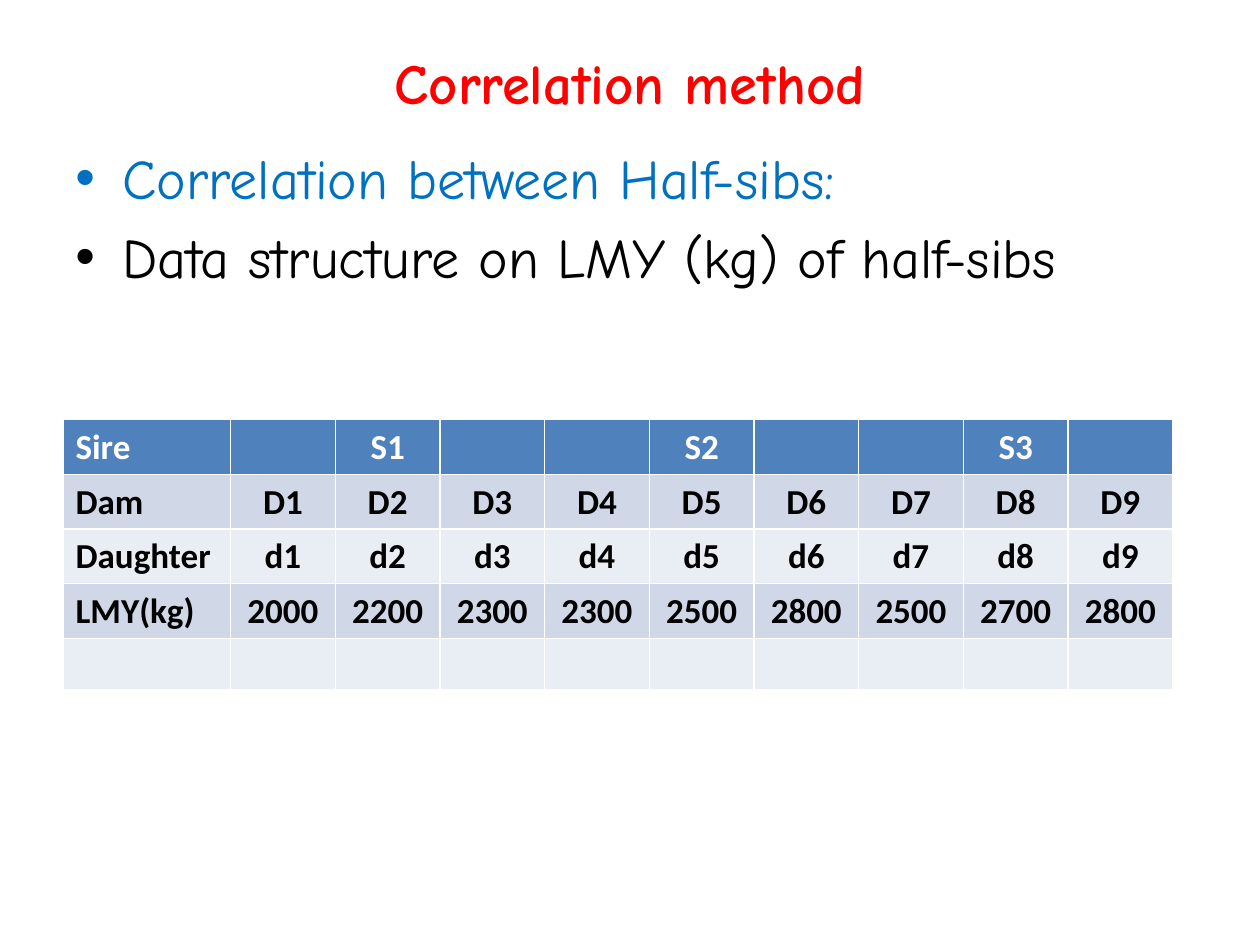
"""Build the slide on the correlation method for half-sibs."""
import lxml.etree
import pptx
import pptx.dml.color
import pptx.enum.text
import pptx.oxml.ns
import pptx.util

Cm = pptx.util.Cm
Pt = pptx.util.Pt
ALIGN = pptx.enum.text.PP_ALIGN
ANCHOR = pptx.enum.text.MSO_ANCHOR

THEME = {
    "heading_font": "Comic Neue",
    "table_font": "Calibri",
    "title_size": 32.4,
    "point_size": 32,
    "table_size": 20,
    "title": "FF0000",
    "accent": "0070C0",
    "ink": "000000",
    "header_ink": "FFFFFF",
    "header_fill": "4F81BD",
    "bands": ("D0D8E8", "E9EDF4"),
}

TITLE = "Correlation method"
POINTS = [
    ("Correlation between Half-sibs:", "accent"),
    ("Data structure on LMY (kg) of half-sibs", "ink"),
]
RECORDS = [
    ["Sire", "", "S1", "", "", "S2", "", "", "S3", ""],
    ["Dam"] + [f"D{number}" for number in range(1, 10)],
    ["Daughter"] + [f"d{number}" for number in range(1, 10)],
    ["LMY(kg)", "2000", "2200", "2300", "2300", "2500", "2800", "2500", "2700", "2800"],
    [""] * 10,
]

LEFT, WIDTH = Cm(1.27), Cm(22.86)
LABEL_WIDTH, VALUE_WIDTH, ROW_HEIGHT = Cm(3.38), Cm(2.11), Cm(1.04)


def color(code):
    return pptx.dml.color.RGBColor.from_string(code)


def style(paragraph, font, size, ink, bold=False):
    paragraph.font.name = font
    paragraph.font.size = Pt(size)
    paragraph.font.bold = bold
    paragraph.font.color.rgb = color(ink)


def add_bullet(paragraph):
    properties = paragraph._p.get_or_add_pPr()
    properties.set("marL", str(Cm(0.95)))
    properties.set("indent", str(-Cm(0.95)))
    for tag, key, value in (("a:buFont", "typeface", "Arial"), ("a:buChar", "char", "•")):
        lxml.etree.SubElement(properties, pptx.oxml.ns.qn(tag)).set(key, value)


def add_title(slide):
    title = slide.shapes.title
    title.left, title.top, title.width, title.height = LEFT, Cm(0.76), WIDTH, Cm(1.78)
    title.text_frame.text = TITLE
    title.text_frame.vertical_anchor = ANCHOR.MIDDLE
    paragraph = title.text_frame.paragraphs[0]
    paragraph.alignment = ALIGN.CENTER
    style(paragraph, THEME["heading_font"], THEME["title_size"], THEME["title"], True)


def add_points(slide):
    frame = slide.shapes.add_textbox(LEFT, Cm(2.54), WIDTH, Cm(14.48)).text_frame
    frame.word_wrap = True
    frame.margin_top = Cm(0.36)
    for index, (point, ink) in enumerate(POINTS):
        paragraph = frame.add_paragraph() if index else frame.paragraphs[0]
        paragraph.text = point
        add_bullet(paragraph)
        if index:
            paragraph.space_before = Pt(0.2 * THEME["point_size"])
        style(paragraph, THEME["heading_font"], THEME["point_size"], THEME[ink])


def add_records(slide):
    columns = len(RECORDS[0])
    width = LABEL_WIDTH + VALUE_WIDTH * (columns - 1)
    table = slide.shapes.add_table(
        len(RECORDS), columns, LEFT, Cm(8.46), width, ROW_HEIGHT * len(RECORDS)
    ).table
    for index, column in enumerate(table.columns):
        column.width = VALUE_WIDTH if index else LABEL_WIDTH
    for row, record in enumerate(RECORDS):
        table.rows[row].height = ROW_HEIGHT
        fill = THEME["bands"][(row - 1) % 2] if row else THEME["header_fill"]
        ink = THEME["ink"] if row else THEME["header_ink"]
        for column, value in enumerate(record):
            cell = table.cell(row, column)
            cell.fill.solid()
            cell.fill.fore_color.rgb = color(fill)
            if value:
                cell.text = value
                paragraph = cell.text_frame.paragraphs[0]
                paragraph.alignment = ALIGN.CENTER if column else ALIGN.LEFT
                style(paragraph, THEME["table_font"], THEME["table_size"], ink, True)


def main():
    deck = pptx.Presentation()
    deck.slide_width, deck.slide_height = Cm(25.4), Cm(19.05)
    slide = deck.slides.add_slide(deck.slide_layouts.get_by_name("Title Only"))
    add_title(slide)
    add_points(slide)
    add_records(slide)
    deck.save("out.pptx")


if __name__ == "__main__":
    main()
